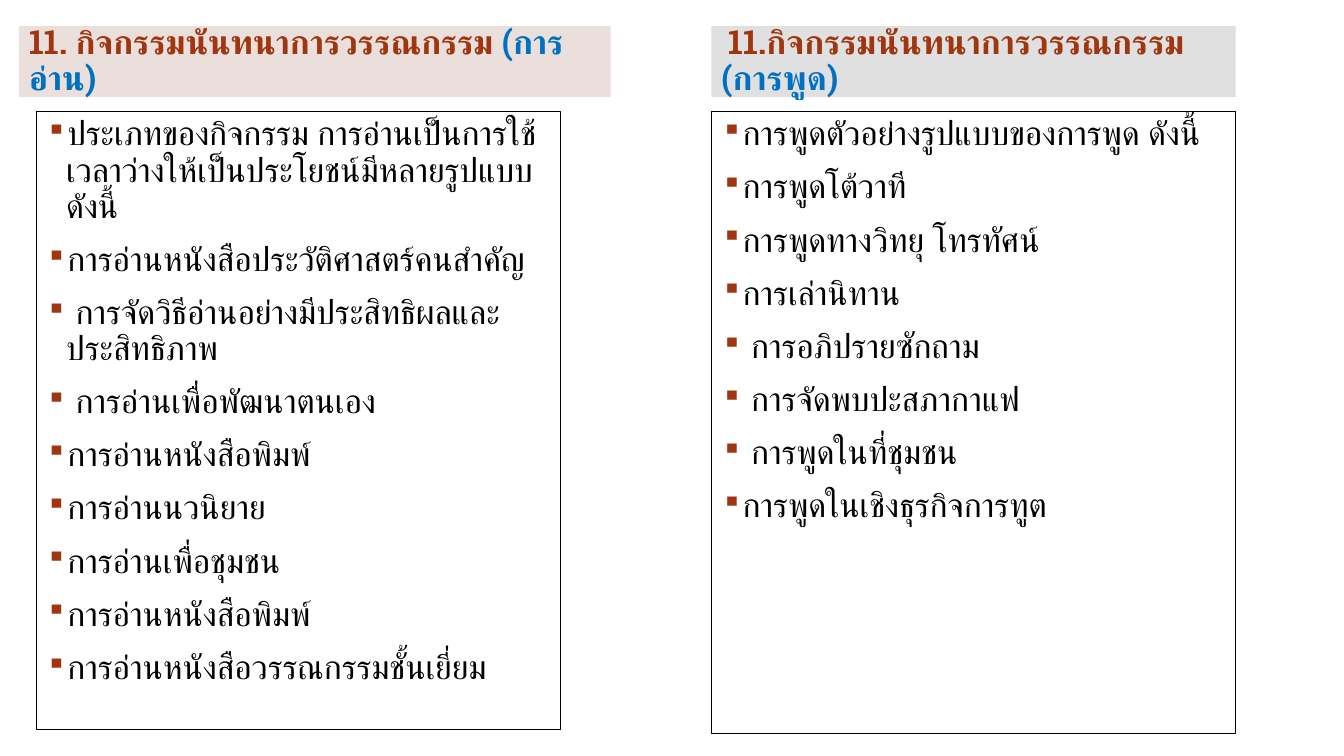
from lxml.etree import SubElement
from pptx import Presentation
from pptx.dml.color import RGBColor
from pptx.enum.lang import MSO_LANGUAGE_ID
from pptx.enum.text import MSO_ANCHOR, MSO_AUTO_SIZE, PP_ALIGN
from pptx.oxml.ns import qn
from pptx.util import Cm, Pt

RUST = RGBColor(0x9E, 0x36, 0x11)
BLUE = RGBColor(0x00, 0x70, 0xC0)
BLACK = RGBColor(0x00, 0x00, 0x00)
BLUSH = RGBColor(0xEB, 0xDF, 0xDB)
GREY = RGBColor(0xE1, 0xE0, 0xE0)

HEAD_TOP, HEAD_H, LIST_TOP = 0.66, 1.78, 2.82
LIST_W, RIGHT_X = 13.21, 17.93

READING = [
    "ประเภทของกิจกรรม การอ่านเป็นการใช้เวลาว่างให้เป็นประโยชน์มีหลายรูปแบบ ดังนี้",
    "การอ่านหนังสือประวัติศาสตร์คนสำคัญ",
    " การจัดวิธีอ่านอย่างมีประสิทธิผลและประสิทธิภาพ",
    " การอ่านเพื่อพัฒนาตนเอง",
    "การอ่านหนังสือพิมพ์",
    "การอ่านนวนิยาย",
    "การอ่านเพื่อชุมชน",
    "การอ่านหนังสือพิมพ์",
    "การอ่านหนังสือวรรณกรรมชั้นเยี่ยม",
]
SPEAKING = [
    "การพูดตัวอย่างรูปแบบของการพูด ดังนี้",
    "การพูดโต้วาที",
    "การพูดทางวิทยุ โทรทัศน์",
    "การเล่านิทาน",
    " การอภิปรายซักถาม",
    " การจัดพบปะสภากาแฟ",
    " การพูดในที่ชุมชน",
    "การพูดในเชิงธุรกิจการทูต",
]


class SlideBuilder:
    font = "Roboto Slab"
    size = 24

    def __init__(self, prs):
        self.slide = prs.slides.add_slide(prs.slide_layouts[5])

    def box(self, x, y, w, h):
        return self.slide.shapes.add_textbox(Cm(x), Cm(y), Cm(w), Cm(h))

    def frame(self, sp, anchor):
        tf = sp.text_frame
        fmt = {"word_wrap": True, "auto_size": MSO_AUTO_SIZE.NONE, "vertical_anchor": anchor}
        for name, value in fmt.items():
            setattr(tf, name, value)
        return tf

    def paragraph(self, p, before=0):
        fmt = {"alignment": PP_ALIGN.LEFT, "line_spacing": 0.9, "space_before": Pt(before)}
        for name, value in fmt.items():
            setattr(p, name, value)

    def run(self, p, text, color, bold=False, size=size):
        r = p.add_run()
        r.text = text
        fmt = {"name": self.font, "size": Pt(size), "bold": bold,
               "language_id": MSO_LANGUAGE_ID.THAI}
        for name, value in fmt.items():
            setattr(r.font, name, value)
        r.font.color.rgb = color
        # Thai letters take the complex-script font
        SubElement(r.font._element, qn("a:cs"), typeface=self.font)

    def bullet(self, p):
        pPr = p._p.get_or_add_pPr()
        pPr.set("marL", str(Cm(0.51)))
        pPr.set("indent", str(-Cm(0.51)))
        SubElement(SubElement(pPr, qn("a:buClr")), qn("a:srgbClr"), val=str(RUST))
        SubElement(pPr, qn("a:buSzPct"), val="85000")
        SubElement(pPr, qn("a:buChar"), char="▪")

    def heading(self, sp, fill, runs):
        sp.fill.solid()
        sp.fill.fore_color.rgb = fill
        p = self.frame(sp, MSO_ANCHOR.MIDDLE).paragraphs[0]
        self.paragraph(p)
        for text, color, size in runs:
            self.run(p, text, color, True, size)

    def title(self, x, y, w, h, fill, runs):
        sp = self.slide.shapes.title
        for name, value in {"left": x, "top": y, "width": w, "height": h}.items():
            setattr(sp, name, Cm(value))
        self.heading(sp, fill, runs)

    def bullet_list(self, x, y, w, h, items):
        sp = self.box(x, y, w, h)
        sp.line.color.rgb = BLACK
        sp.line.width = Pt(0.75)
        tf = self.frame(sp, MSO_ANCHOR.TOP)
        for i, text in enumerate(items):
            p = tf.add_paragraph() if i else tf.paragraphs[0]
            self.bullet(p)
            self.paragraph(p, 12 if i else 0)
            self.run(p, text, BLACK)


def main():
    prs = Presentation()
    prs.slide_width, prs.slide_height = Cm(33.87), Cm(19.05)
    s = SlideBuilder(prs)

    # Reading column
    s.title(0.48, HEAD_TOP, 14.91, HEAD_H, BLUSH,
            [("11. กิจกรรมนันทนาการวรรณกรรม ", RUST, 24), ("(การอ่าน)", BLUE, 24)])
    s.bullet_list(0.91, LIST_TOP, LIST_W, 15.57, READING)

    # Speaking column
    s.heading(s.box(RIGHT_X, HEAD_TOP, LIST_W, HEAD_H), GREY,
              [(" ", RUST, 20), ("11.กิจกรรมนันทนาการวรรณกรรม ", RUST, 24),
               ("(การพูด)", BLUE, 24)])
    s.bullet_list(RIGHT_X, LIST_TOP, LIST_W, 15.67, SPEAKING)

    prs.save("out.pptx")


if __name__ == "__main__":
    main()
